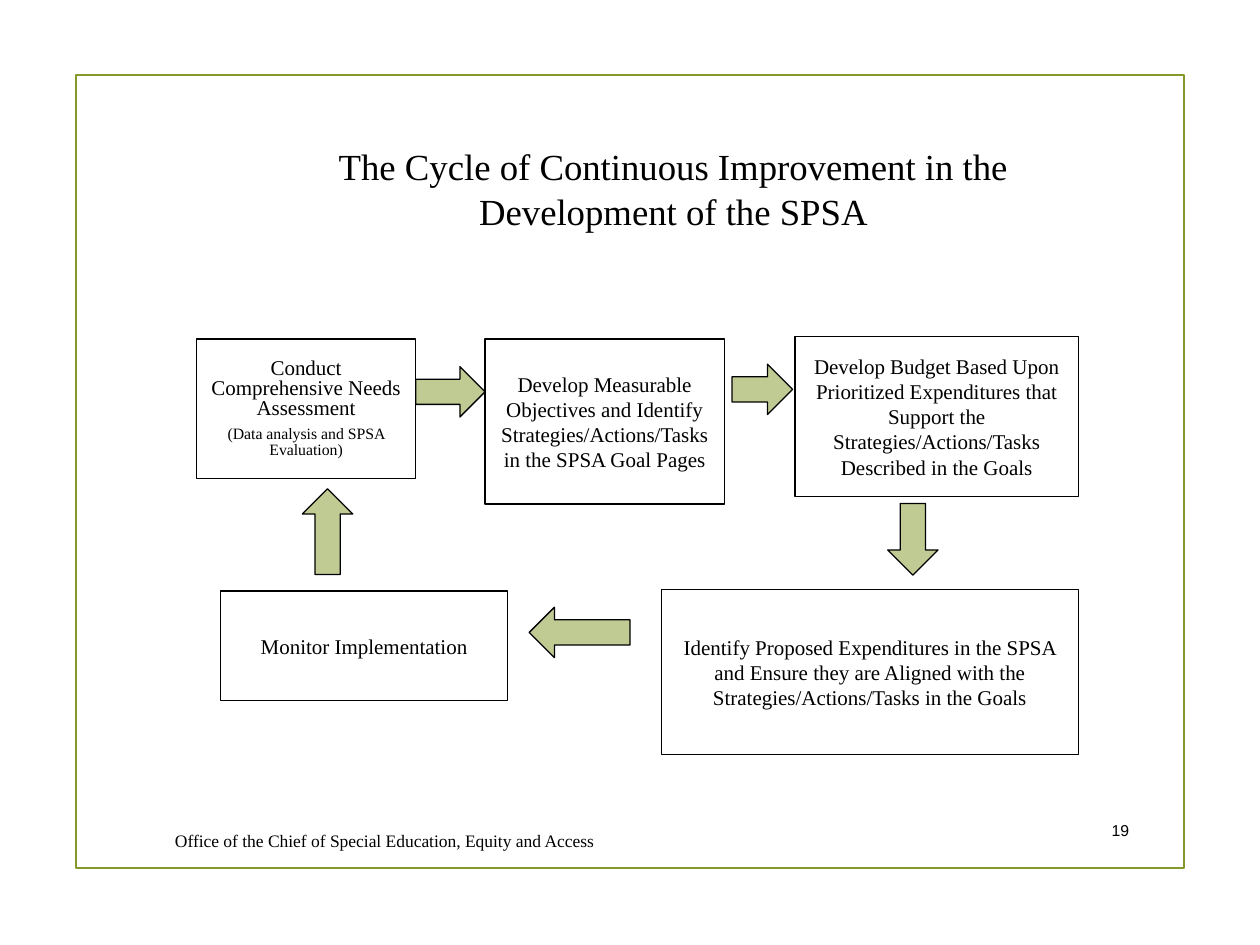
import dataclasses

import lxml.etree
import pptx
import pptx.dml.color
import pptx.enum.shapes
import pptx.enum.text
import pptx.oxml.ns
import pptx.util

Pt = pptx.util.Pt
ALIGN = pptx.enum.text.PP_ALIGN
SHAPE = pptx.enum.shapes.MSO_SHAPE


@dataclasses.dataclass(frozen=True)
class Theme:
    ink: str = "000000"
    paper: str = "FFFFFF"
    accent: str = "83992A"
    serif: str = "Times New Roman"
    sans: str = "Arial"
    title: float = 21
    body: float = 12
    detail: float = 9
    footer: float = 10
    step_line: float = 0.75
    frame_line: float = 1.25


THEME = Theme()

STEPS = [
    ((112.3, 193.7, 125.3, 79.9), 0.8,
     [("Conduct Comprehensive Needs Assessment", THEME.body),
      ("(Data analysis and SPSA Evaluation)", THEME.detail)]),
    ((277.2, 193.7, 136.8, 94.3), 1,
     [("Develop Measurable Objectives and Identify "
       "Strategies/Actions/Tasks in the SPSA Goal Pages", THEME.body)]),
    ((454.3, 192.2, 162, 91.4), 1,
     [("Develop Budget Based Upon Prioritized Expenditures that Support the "
       "Strategies/Actions/Tasks Described in the Goals", THEME.body)]),
    ((378, 337, 238.3, 94.3), 1,
     [("Identify Proposed Expenditures in the SPSA and Ensure they are "
       "Aligned with the Strategies/Actions/Tasks in the Goals", THEME.body)]),
    ((126, 337.7, 164.2, 62.6), 1,
     [("Monitor Implementation", THEME.body)]),
]

ARROW_HEIGHT = 28.8
ARROWS = [
    (237.6, 209.5, 39.6, 0),
    (418.3, 208.1, 34.6, 0),
    (501.1, 293.8, 41, 90),
    (302.4, 347, 57.6, 180),
    (162.7, 289.4, 49, 270),
]


def color(value):
    return pptx.dml.color.RGBColor.from_string(value)


def write(holder, lines, align, font=THEME.serif, spacing=1, insets=(7.2, 3.6)):
    frame = holder.text_frame
    frame.word_wrap = True
    frame.vertical_anchor = pptx.enum.text.MSO_ANCHOR.MIDDLE
    frame.margin_left = frame.margin_right = Pt(insets[0])
    frame.margin_top = frame.margin_bottom = Pt(insets[1])
    for index, (words, size) in enumerate(lines):
        paragraph = frame.add_paragraph() if index else frame.paragraphs[0]
        paragraph.alignment = align
        paragraph.line_spacing = spacing
        if index:
            paragraph.space_before = Pt(size / 2)
        run = paragraph.add_run()
        run.text = words
        run.font.name = font
        run.font.size = Pt(size)
        run.font.color.rgb = color(THEME.ink)


def add_label(slide, bounds, words, size, align, **style):
    label = slide.shapes.add_textbox(*map(Pt, bounds))
    write(label, [(words, size)], align, **style)


def add_outlined(slide, kind, bounds, line_color, line_width, fill=None):
    outlined = slide.shapes.add_shape(kind, *map(Pt, bounds))
    outlined.shadow.inherit = False
    outlined.line.color.rgb = color(line_color)
    outlined.line.width = Pt(line_width)
    if fill:
        outlined.fill.solid()
        outlined.fill.fore_color.rgb = color(fill)
    else:
        outlined.fill.background()
    return outlined


def add_step(slide, bounds, spacing, lines):
    step = add_outlined(slide, SHAPE.RECTANGLE, bounds, THEME.ink,
                        THEME.step_line, THEME.paper)
    write(step, lines, ALIGN.CENTER, spacing=spacing)


def add_arrow(slide, left, top, length, rotation):
    arrow = add_outlined(slide, SHAPE.RIGHT_ARROW,
                         (left, top, length, ARROW_HEIGHT),
                         THEME.ink, 0, THEME.accent)
    arrow.rotation = rotation
    qn = pptx.oxml.ns.qn
    tint = arrow._element.spPr.find(qn("a:solidFill")).find(qn("a:srgbClr"))
    lxml.etree.SubElement(tint, qn("a:alpha"), val="50000")


def main():
    deck = pptx.Presentation()
    deck.slide_width, deck.slide_height = Pt(720), Pt(540)
    slide = deck.slides.add_slide(deck.slide_layouts[6])

    add_outlined(slide, SHAPE.RECTANGLE, (43.5, 42.8, 633, 453.2),
                 THEME.accent, THEME.frame_line)
    add_label(slide, (180, 80.6, 409.7, 54),
              "The Cycle of Continuous Improvement in the Development of the SPSA",
              THEME.title, ALIGN.CENTER, insets=(5.8, 2.9))
    add_label(slide, (454.3, 460.1, 198, 28.1), "19",
              THEME.detail, ALIGN.RIGHT, font=THEME.sans)
    for step in STEPS:
        add_step(slide, *step)
    for arrow in ARROWS:
        add_arrow(slide, *arrow)
    add_label(slide, (92.9, 469.4, 401.8, 22.3),
              "Office of the Chief of Special Education, Equity and Access",
              THEME.footer, ALIGN.LEFT)

    deck.save("out.pptx")


if __name__ == "__main__":
    main()
